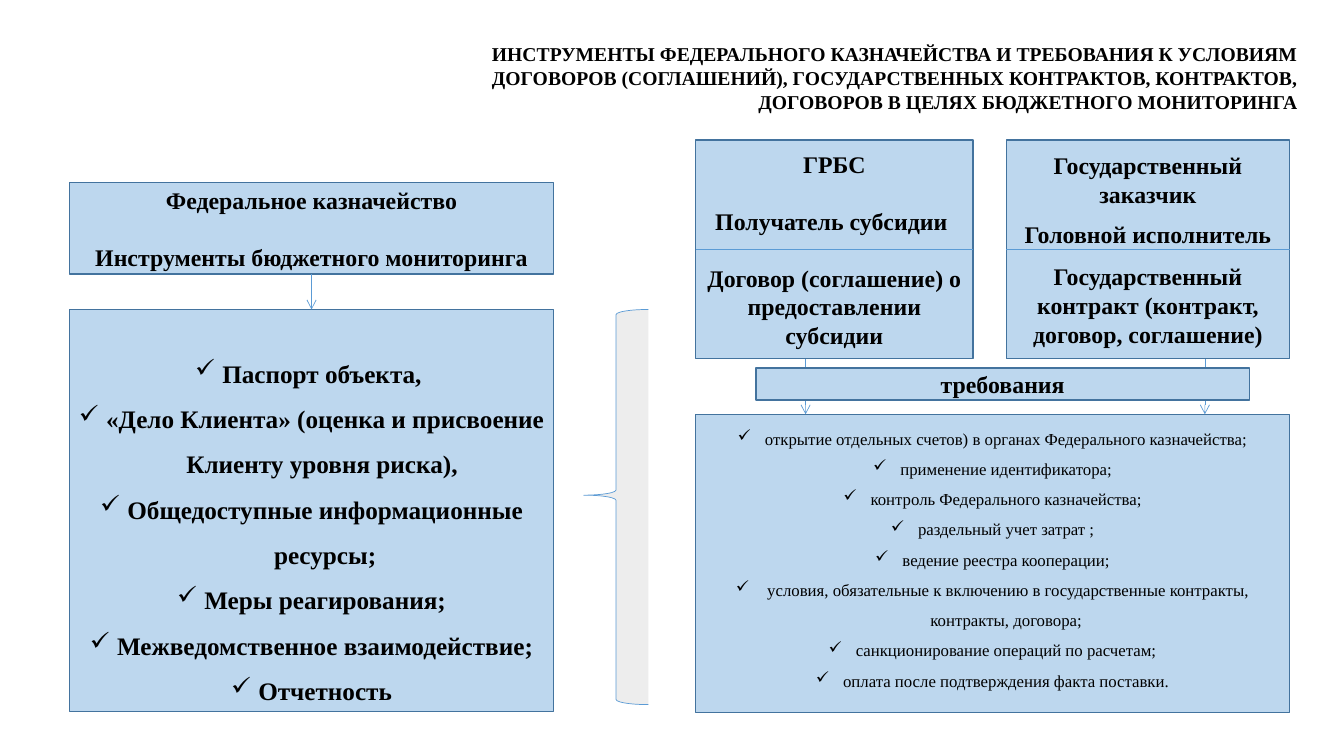
from dataclasses import dataclass

from lxml.etree import SubElement
from pptx import Presentation
from pptx.dml.color import RGBColor
from pptx.enum.shapes import MSO_CONNECTOR, MSO_SHAPE
from pptx.enum.text import MSO_ANCHOR, PP_ALIGN
from pptx.oxml.ns import qn
from pptx.util import Inches, Pt

COLUMNS, ROWS, CELL = 133.3, 75, 0.1


@dataclass(frozen=True)
class Theme:
    """Colours, type sizes and line widths of the slide."""
    font: str = "Times New Roman"
    ink: str = "000000"
    panel: str = "BDD7EE"
    border: str = "43739E"
    accent: str = "5B9BD5"
    brace: str = "EDEDED"
    title: int = 14
    label: int = 17
    tools: int = 18
    terms: int = 12
    border_width: float = 1
    accent_width: float = 0.5


@dataclass(frozen=True)
class Box:
    """A rectangle in grid columns and rows."""
    left: float
    top: float
    width: float
    height: float

    @property
    def right(self):
        """Return the right edge."""
        return self.left + self.width

    @property
    def bottom(self):
        """Return the bottom edge."""
        return self.top + self.height

    def emu(self):
        """Return the rectangle in slide lengths."""
        return [grid(n) for n in (self.left, self.top, self.width, self.height)]


THEME = Theme()

TITLE = ("ИНСТРУМЕНТЫ ФЕДЕРАЛЬНОГО КАЗНАЧЕЙСТВА И ТРЕБОВАНИЯ К УСЛОВИЯМ ДОГОВОРОВ "
         "(СОГЛАШЕНИЙ), ГОСУДАРСТВЕННЫХ КОНТРАКТОВ, КОНТРАКТОВ, ДОГОВОРОВ В ЦЕЛЯХ "
         "БЮДЖЕТНОГО МОНИТОРИНГА")
TREASURY = [("Федеральное казначейство", 0), ("Инструменты бюджетного мониторинга", 20)]
TOOLS = ["Паспорт объекта, ",
         "«Дело Клиента» (оценка и присвоение Клиенту уровня риска), ",
         "Общедоступные информационные ресурсы;", "Меры реагирования;",
         "Межведомственное взаимодействие;", "Отчетность"]
SUBSIDY = [("ГРБС", 0), ("Получатель субсидии ", 20),
           ("Договор (соглашение) о предоставлении субсидии", 20)]
CONTRACT = [("Государственный заказчик", 0), ("Головной исполнитель", 8),
            ("Государственный контракт (контракт, договор, соглашение)", 10)]
TERMS = ["открытие отдельных счетов) в органах Федерального казначейства;",
         "применение идентификатора;", "контроль Федерального казначейства;",
         "раздельный учет затрат ;", "ведение реестра кооперации;",
         " условия, обязательные к включению в государственные контракты, контракты, договора;",
         "санкционирование операций по расчетам;",
         "оплата после подтверждения факта поставки."]


def grid(cells):
    """Convert grid cells to a slide length."""
    return Inches(cells * CELL)


def paint(shape, fill, line, width):
    """Fill and outline a shape without a shadow."""
    shape.shadow.inherit = False
    shape.fill.solid()
    shape.fill.fore_color.rgb = RGBColor.from_string(fill)
    shape.line.color.rgb = RGBColor.from_string(line)
    shape.line.width = Pt(width)


def write(frame, entries, size, bold=True, align=PP_ALIGN.CENTER,
          anchor=MSO_ANCHOR.MIDDLE, check=False, head=0.04):
    """Write (text, space before) entries into a text frame."""
    layout = {"word_wrap": True, "vertical_anchor": anchor,
              "margin_left": Inches(0.09), "margin_right": Inches(0.09),
              "margin_top": Inches(head), "margin_bottom": Inches(0.04)}
    for name, value in layout.items():
        setattr(frame, name, value)
    style = {"name": THEME.font, "size": Pt(size), "bold": bold}
    for index, (text, gap) in enumerate(entries):
        paragraph = frame.add_paragraph() if index else frame.paragraphs[0]
        paragraph.alignment = align
        if gap:
            paragraph.space_before = Pt(gap)
        if check:
            paragraph.line_spacing = 1.5
            props = paragraph._p.get_or_add_pPr()
            props.set("marL", str(Inches(0.27)))
            props.set("indent", str(-Inches(0.27)))
            SubElement(props, qn("a:buChar")).set("char", "✓")
        run = paragraph.add_run()
        run.text = text
        for name, value in style.items():
            setattr(run.font, name, value)
        run.font.color.rgb = RGBColor.from_string(THEME.ink)


def panel(slide, box, entries, size=THEME.label, **style):
    """Draw a blue panel with text."""
    shape = slide.shapes.add_shape(MSO_SHAPE.RECTANGLE, *box.emu())
    paint(shape, THEME.panel, THEME.border, THEME.border_width)
    write(shape.text_frame, entries, size, **style)


def checklist(slide, box, items, size, **style):
    """Draw a panel of ticked items."""
    panel(slide, box, [(item, 0) for item in items], size,
          anchor=MSO_ANCHOR.TOP, check=True, **style)


def rule(slide, start, end, arrow=False):
    """Draw a thin line, with an arrowhead at its end if asked."""
    line = slide.shapes.add_connector(
        MSO_CONNECTOR.STRAIGHT, *(grid(n) for n in (*start, *end)))
    line.line.color.rgb = RGBColor.from_string(THEME.accent)
    line.line.width = Pt(THEME.accent_width)
    if arrow:
        SubElement(line.line._get_or_add_ln(), qn("a:tailEnd")).set("type", "arrow")
    SubElement(line._element.spPr, qn("a:effectLst"))


def heading(slide, box):
    """Place the slide title."""
    title = slide.shapes.add_textbox(*box.emu())
    write(title.text_frame, [(TITLE, 0)], THEME.title,
          align=PP_ALIGN.RIGHT, anchor=MSO_ANCHOR.TOP)


def treasury(slide, box):
    """Place the treasury panel, its arrow and its list of tools."""
    owner = Box(box.left, box.top, box.width, 9.1)
    tools = Box(box.left, box.top + 12.6, box.width, box.height - 12.6)
    middle = box.left + box.width / 2
    panel(slide, owner, TREASURY)
    checklist(slide, tools, TOOLS, THEME.tools, head=0.33)
    rule(slide, (middle, owner.bottom), (middle, tools.top), arrow=True)


def bracket(slide, box):
    """Place the brace between the two halves."""
    brace = slide.shapes.add_shape(MSO_SHAPE.LEFT_BRACE, *box.emu())
    brace.adjustments[0], brace.adjustments[1] = 0.08, 0.47
    paint(brace, THEME.brace, THEME.accent, THEME.accent_width)


def party(slide, box, entries):
    """Place a panel of parties split from their agreement by a line."""
    panel(slide, box, entries)
    split = box.top + box.height / 2
    rule(slide, (box.left, split), (box.right, split))


def requirements(slide, box):
    """Place both parties, the requirements bar and the list of terms."""
    subsidy = Box(box.left, box.top, 27.5, 21.7)
    contract = Box(box.right - 28.1, box.top, 28.1, 21.7)
    terms = Box(box.left, box.top + 27.2, box.width, box.height - 27.2)
    bar = Box(box.left + 6, box.top + 22.6, 48.9, 3.2)
    party(slide, subsidy, SUBSIDY)
    party(slide, contract, CONTRACT)
    checklist(slide, terms, TERMS, THEME.terms, bold=False)
    for column in (box.left + 10.9, box.right - 8.4):
        rule(slide, (column, subsidy.bottom), (column, terms.top), arrow=True)
    panel(slide, bar, [("требования", 0)])


def main():
    """Build the slide and save it."""
    deck = Presentation()
    deck.slide_width, deck.slide_height = grid(COLUMNS), grid(ROWS)
    slide = deck.slides.add_slide(deck.slide_layouts[6])
    heading(slide, Box(39.5, 3.8, 90.1, 7.9))
    treasury(slide, Box(6.9, 18.1, 48, 52.5))
    bracket(slide, Box(57.9, 30.7, 6.4, 39.2))
    requirements(slide, Box(69, 13.9, 58.9, 56.8))
    deck.save("out.pptx")


if __name__ == "__main__":
    main()
